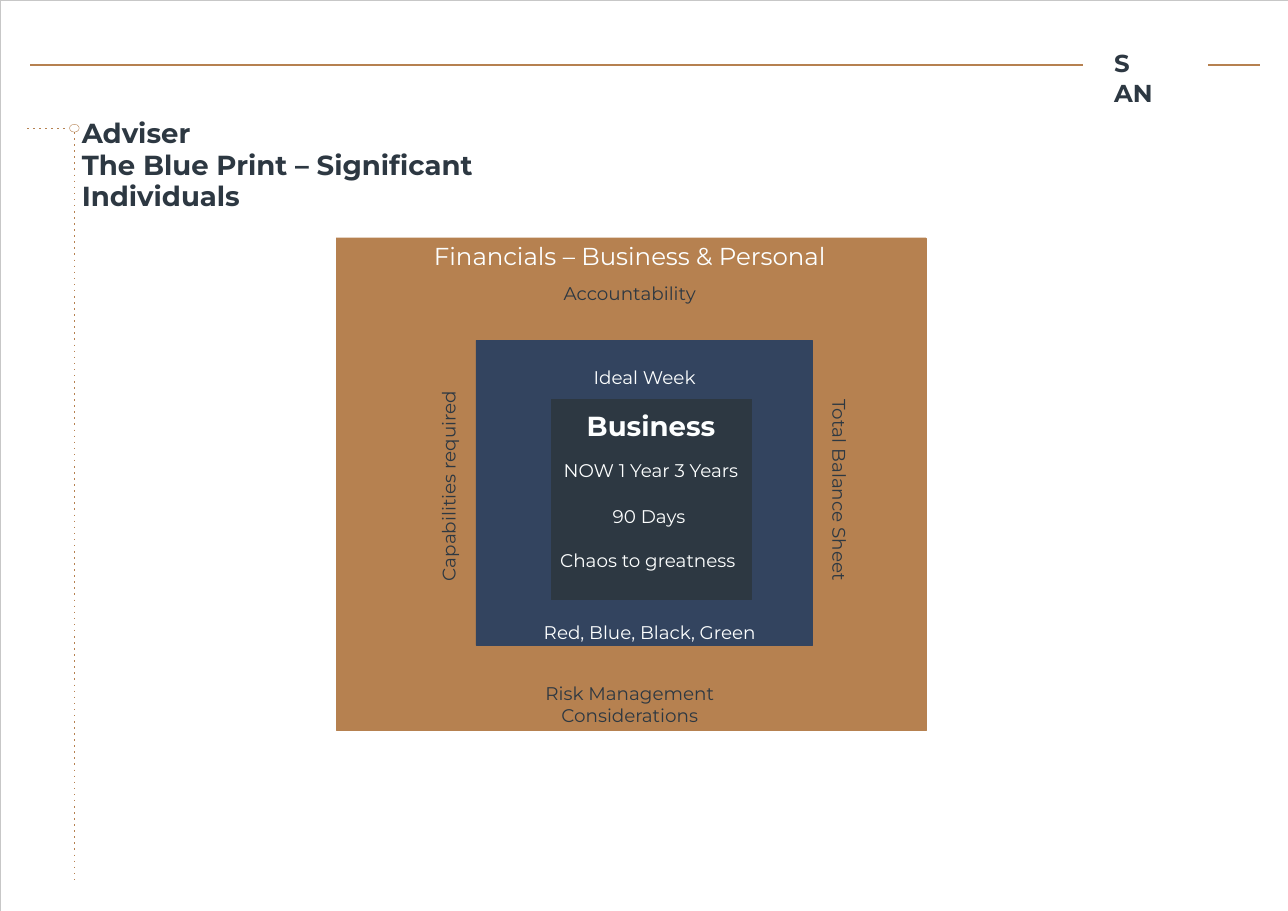
"""Build the Blue Print slide: nested planning squares with a title and rules."""
from dataclasses import dataclass

from lxml import etree
from pptx import Presentation
from pptx.dml.color import RGBColor
from pptx.enum.shapes import MSO_CONNECTOR, MSO_SHAPE
from pptx.enum.text import MSO_ANCHOR, PP_ALIGN
from pptx.oxml.ns import qn
from pptx.util import Inches, Pt

LEFT, CENTER = PP_ALIGN.LEFT, PP_ALIGN.CENTER
MIDDLE = MSO_ANCHOR.MIDDLE
STRAIGHT = MSO_CONNECTOR.STRAIGHT
RECT, OVAL = MSO_SHAPE.RECTANGLE, MSO_SHAPE.OVAL

FONT = "Montserrat"
COPPER, NAVY, SLATE = "B68150", "33445F", "2D3842"
WHITE, EDGE = "FDFFFF", "C7C7C7"
WIDTH, HEIGHT = Inches(11.69), Inches(8.27)


@dataclass
class Box:
    x: float
    y: float
    w: float
    h: float
    line: str
    fill: str | None = None
    kind: int = RECT


@dataclass
class Rule:
    x1: float
    y1: float
    x2: float
    y2: float
    dotted: bool = False


@dataclass
class Label:
    text: str
    x: float
    y: float
    color: str
    size: float = 12
    w: float = 38
    h: float = 6
    bold: bool = False
    align: int = CENTER
    vert: str = "horz"
    spacing: float | None = None


BOXES = [
    Box(0, 0, 100, 100, EDGE),
    Box(26.1, 26.1, 45.8, 54.05, COPPER, COPPER),
    Box(36.95, 37.35, 26.1, 33.5, NAVY, NAVY),
    Box(42.8, 43.8, 15.55, 22, SLATE, SLATE),
    Box(5.4, 13.65, 0.75, 0.85, COPPER, kind=OVAL),
]

RULES = [
    Rule(2.35, 7.15, 84.1, 7.15),
    Rule(93.8, 7.15, 97.85, 7.15),
    Rule(2.1, 14.1, 5.4, 14.1, dotted=True),
    Rule(5.78, 14.5, 5.78, 97, dotted=True),
]

LABELS = [
    Label("S AN", 88.6, 8.55, SLATE, 16, w=4.2, h=8, bold=True, align=LEFT),
    Label("Adviser\nThe Blue Print – Significant Individuals", 26.35, 18.1,
          SLATE, 18, w=40, h=12, bold=True, align=LEFT, spacing=20.6),
    Label("Financials – Business & Personal", 48.9, 28.1, WHITE, 16),
    Label("Accountability", 48.9, 32.15, SLATE),
    Label("Ideal Week", 50.05, 41.4, WHITE),
    Label("Business", 50.55, 46.75, WHITE, 18, bold=True),
    Label("NOW 1 Year 3 Years", 50.55, 51.6, WHITE),
    Label("90 Days", 50.4, 56.65, WHITE),
    Label("Chaos to greatness", 50.3, 61.5, WHITE),
    Label("Red, Blue, Black, Green", 50.45, 69.35, WHITE),
    Label("Risk Management\nConsiderations", 48.9, 77.3, SLATE),
    Label("Capabilities required", 34.8, 53.35, SLATE, w=3, h=28, vert="vert270"),
    Label("Total Balance Sheet", 65.2, 53.8, SLATE, w=3, h=28, vert="vert"),
]


def rgb(color: str) -> RGBColor:
    """Turn a hex string into a colour."""
    return RGBColor.from_string(color)


def col(share: float) -> int:
    """Turn a percentage of the slide width into a length."""
    return round(WIDTH * share / 100)


def row(share: float) -> int:
    """Turn a percentage of the slide height into a length."""
    return round(HEIGHT * share / 100)


def draw_box(slide, box: Box) -> None:
    """Draw an outlined shape, filled when it has a fill colour."""
    s = slide.shapes.add_shape(box.kind, col(box.x), row(box.y), col(box.w), row(box.h))
    s.shadow.inherit = False
    s.line.color.rgb = rgb(box.line)
    s.line.width = Pt(0.25)
    if box.fill:
        s.fill.solid()
        s.fill.fore_color.rgb = rgb(box.fill)
    else:
        s.fill.background()


def draw_rule(slide, rule: Rule) -> None:
    """Draw a solid or dotted copper line."""
    s = slide.shapes.add_connector(
        STRAIGHT, col(rule.x1), row(rule.y1), col(rule.x2), row(rule.y2))
    s.line.color.rgb = rgb(COPPER)
    s.line.width = Pt(1)
    props = s.element.spPr
    if rule.dotted:
        etree.SubElement(props.find(qn("a:ln")), qn("a:prstDash"), val="dot")
    etree.SubElement(props, qn("a:effectLst"))


def draw_label(slide, label: Label) -> None:
    """Draw text centred on the label's point."""
    s = slide.shapes.add_textbox(
        col(label.x - label.w / 2), row(label.y - label.h / 2), col(label.w), row(label.h))
    tf = s.text_frame
    tf.margin_left = tf.margin_right = tf.margin_top = tf.margin_bottom = 0
    tf.word_wrap = True
    tf.vertical_anchor = MIDDLE
    tf.text = label.text
    s.element.txBody.bodyPr.set("vert", label.vert)
    for p in tf.paragraphs:
        p.alignment = label.align
        p.font.name = FONT
        p.font.size = Pt(label.size)
        p.font.bold = label.bold
        p.font.color.rgb = rgb(label.color)
        if label.spacing:
            p.line_spacing = Pt(label.spacing)


def main() -> None:
    """Build and save the slide."""
    prs = Presentation()
    prs.slide_width, prs.slide_height = WIDTH, HEIGHT
    slide = prs.slides.add_slide(prs.slide_layouts[6])
    for box in BOXES:
        draw_box(slide, box)
    for rule in RULES:
        draw_rule(slide, rule)
    for label in LABELS:
        draw_label(slide, label)
    prs.save("out.pptx")


if __name__ == "__main__":
    main()
